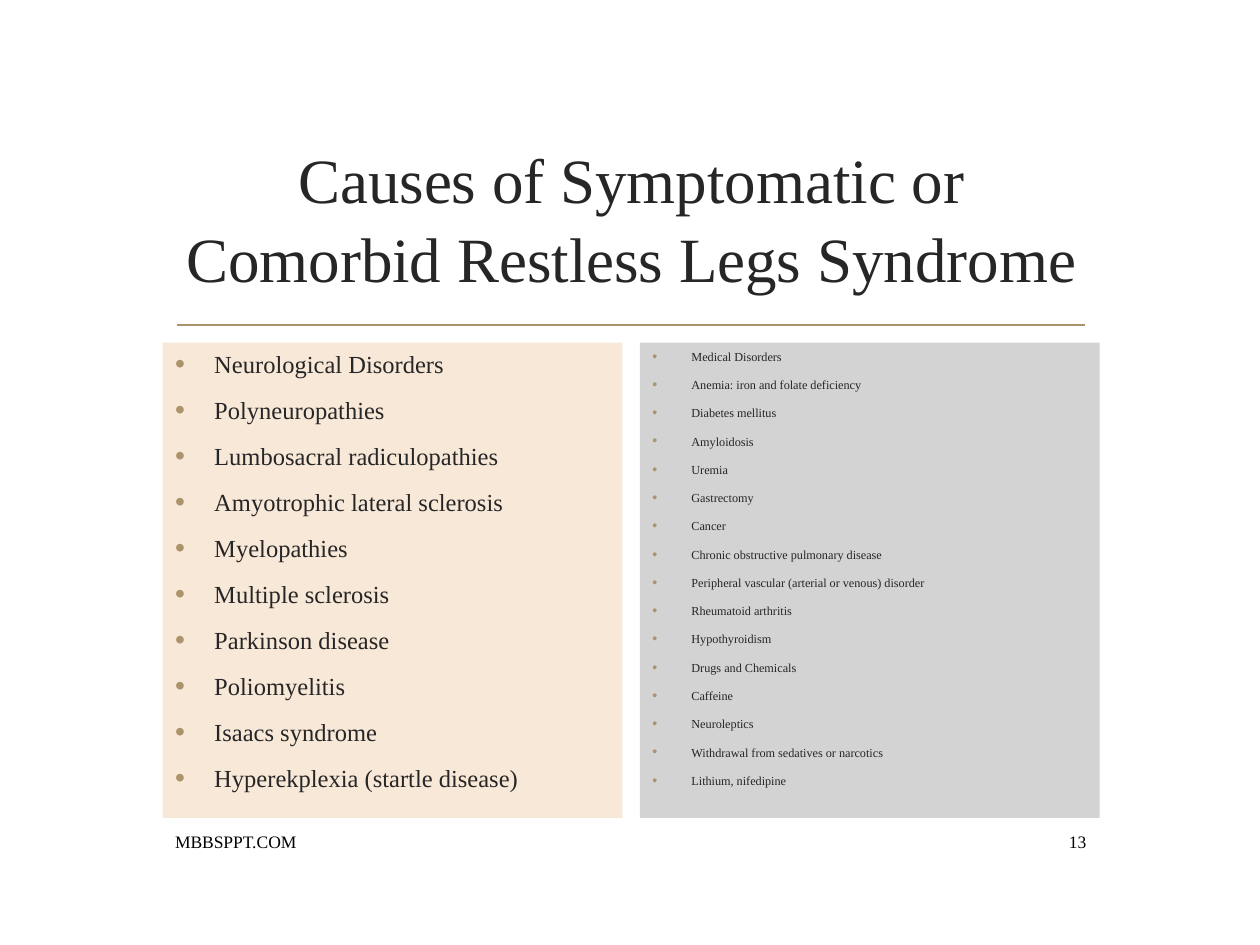
from pptx import Presentation
from pptx.dml.color import RGBColor
from pptx.enum.shapes import MSO_CONNECTOR, MSO_SHAPE
from pptx.enum.text import MSO_ANCHOR, PP_ALIGN
from pptx.oxml.ns import qn
from pptx.util import Cm, Pt
from lxml.etree import SubElement

COLORS = {"text": "262626", "foot": "000000", "gold": "AB946B",
          "cream": "F8E8D8", "gray": "D3D3D3"}
FONT = "Times New Roman"


def add_run(para, text, size, color):
    run = para.add_run()
    run.text = text
    run.font.name = FONT
    run.font.size = Pt(size)
    run.font.color.rgb = RGBColor.from_string(COLORS[color])


def add_bullet(para):
    props = para._p.get_or_add_pPr()
    props.set("marL", str(Cm(0.79)))
    props.set("indent", str(-Cm(0.79)))
    tint = SubElement(props, qn("a:buClr"))
    SubElement(tint, qn("a:srgbClr"), val=COLORS["gold"])
    SubElement(props, qn("a:buSzPct"), val="115000")
    SubElement(props, qn("a:buFont"), typeface="Arial")
    SubElement(props, qn("a:buChar"), char="•")


deck = Presentation()
deck.slide_width, deck.slide_height = Cm(25.4), Cm(19.05)
slide = deck.slides.add_slide(deck.slide_layouts[5])

rule = slide.shapes.add_connector(
    MSO_CONNECTOR.STRAIGHT, Cm(3.56), Cm(6.55), Cm(21.87), Cm(6.55))
rule.line.color.rgb = RGBColor.from_string(COLORS["gold"])
rule.line.width = Pt(1.25)
SubElement(rule._element.spPr, qn("a:effectLst"))

title = slide.shapes.title
title.left, title.top = Cm(3.28), Cm(2.54)
title.width, title.height = Cm(18.9), Cm(3.63)
title.text_frame.vertical_anchor = MSO_ANCHOR.MIDDLE
head = title.text_frame.paragraphs[0]
head.alignment = PP_ALIGN.CENTER
head.line_spacing = 1.04
add_run(head, "Causes of Symptomatic or Comorbid Restless Legs Syndrome", 36, "text")

nerve = ["Neurological Disorders", "Polyneuropathies",
         "Lumbosacral radiculopathies", "Amyotrophic lateral sclerosis",
         "Myelopathies", "Multiple sclerosis", "Parkinson disease",
         "Poliomyelitis", "Isaacs syndrome", "Hyperekplexia (startle disease)"]
other = ["Medical Disorders", "Anemia: iron and folate deficiency",
         "Diabetes mellitus", "Amyloidosis", "Uremia", "Gastrectomy", "Cancer",
         "Chronic obstructive pulmonary disease",
         "Peripheral vascular (arterial or venous) disorder",
         "Rheumatoid arthritis", "Hypothyroidism", "Drugs and Chemicals",
         "Caffeine", "Neuroleptics", "Withdrawal from sedatives or narcotics",
         "Lithium, nifedipine"]

for left, fill, size, items in [(3.28, "cream", 14, nerve),
                                (12.9, "gray", 7, other)]:
    panel = slide.shapes.add_shape(
        MSO_SHAPE.RECTANGLE, Cm(left), Cm(6.91), Cm(9.27), Cm(9.58))
    panel.shadow.inherit = False
    panel.fill.solid()
    panel.fill.fore_color.rgb = RGBColor.from_string(COLORS[fill])
    panel.line.fill.background()
    frame = panel.text_frame
    frame.word_wrap = True
    frame.vertical_anchor = MSO_ANCHOR.TOP
    for rank, item in enumerate(items):
        para = frame.add_paragraph() if rank else frame.paragraphs[0]
        add_bullet(para)
        para.alignment = PP_ALIGN.LEFT
        para.space_before = Pt(size / 4 if rank else 0)
        para.space_after = Pt(6)
        add_run(para, item, size, "text")

for left, width, align, text in [(3.28, 14.17, PP_ALIGN.LEFT, "MBBSPPT.COM"),
                                 (21.06, 1.09, PP_ALIGN.RIGHT, "13")]:
    box = slide.shapes.add_textbox(Cm(left), Cm(16.56), Cm(width), Cm(0.79))
    frame = box.text_frame
    frame.word_wrap = True
    frame.vertical_anchor = MSO_ANCHOR.MIDDLE
    para = frame.paragraphs[0]
    para.alignment = align
    add_run(para, text, 10, "foot")

deck.save("out.pptx")
